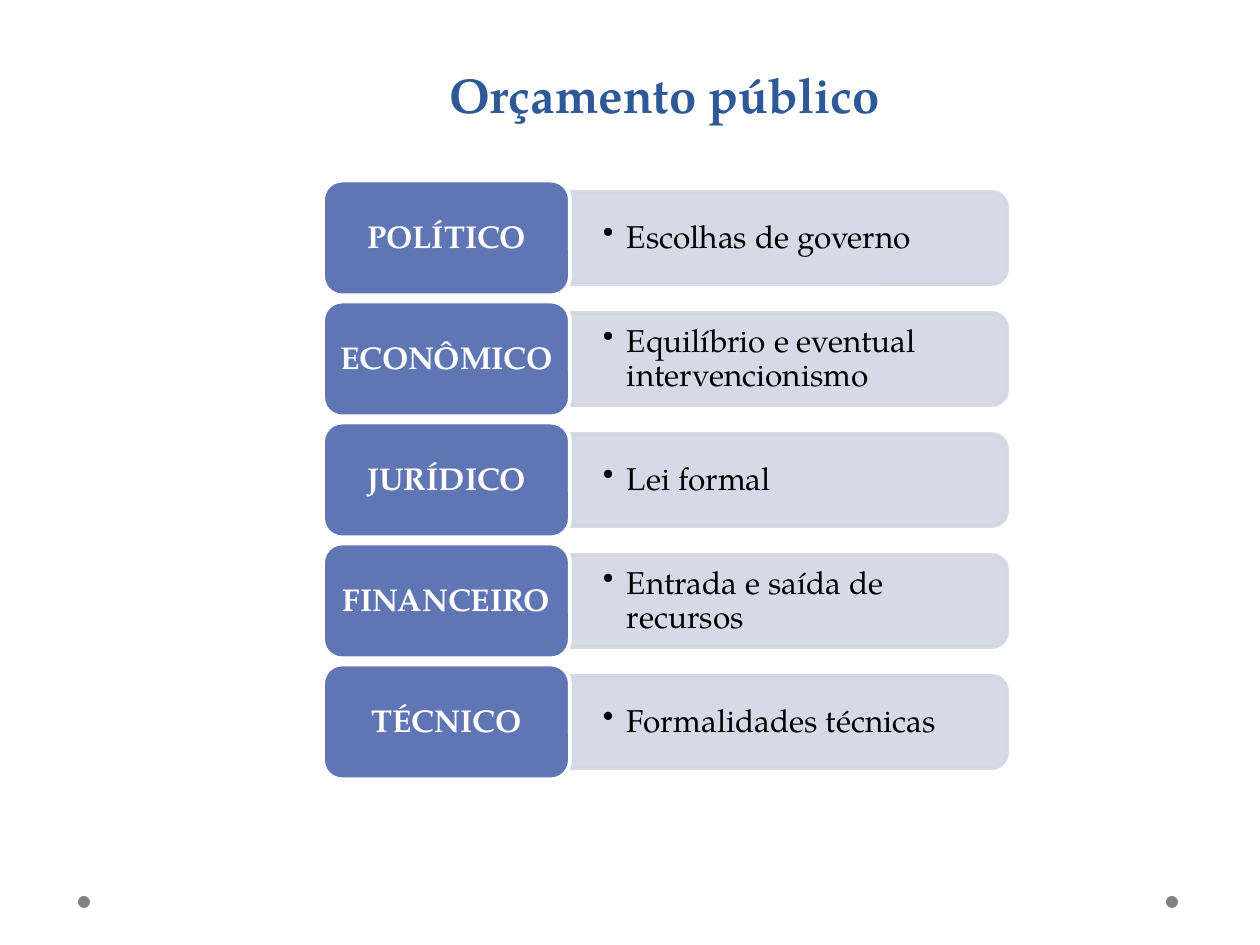
from lxml.etree import SubElement
from pptx import Presentation
from pptx.dml.color import RGBColor
from pptx.enum.shapes import MSO_SHAPE as Shape
from pptx.enum.text import MSO_ANCHOR as Anchor, PP_ALIGN as Align
from pptx.oxml.ns import qn
from pptx.util import Emu, Pt

FONT = "TeX Gyre Pagella"
COLORS = {
    "title": "2F5897",
    "label": "6076B4",
    "panel": "D2D6E5",
    "white": "FFFFFF",
    "black": "000000",
    "dot": "808080",
}
ROWS = [
    ("POLÍTICO", "Escolhas de governo"),
    ("ECONÔMICO", "Equilíbrio e eventual intervencionismo"),
    ("JURÍDICO", "Lei formal"),
    ("FINANCEIRO", "Entrada e saída de recursos"),
    ("TÉCNICO", "Formalidades técnicas"),
]
FIRST_ROW_CENTER, ROW_STEP = 238, 121
LABEL_LEFT, LABEL_WIDTH, LABEL_HEIGHT = 323, 247, 115
PANEL_LEFT, PANEL_WIDTH, PANEL_HEIGHT = 569, 438, 92
DETAIL_WIDTH, DETAIL_HEIGHT = 433, 83


def px(length):
    return Emu(round(length * 914400 / 126))


def color(name):
    return RGBColor.from_string(COLORS[name])


def add_shape(page, kind, left, top, width, height, fill, line=None):
    shape = page.shapes.add_shape(kind, px(left), px(top), px(width), px(height))
    shape.shadow.inherit = False
    shape.fill.solid()
    shape.fill.fore_color.rgb = color(fill)
    if line:
        shape.line.color.rgb = color(line)
        shape.line.width = Pt(2.25)
    else:
        shape.line.fill.background()
    return shape


def set_opacity(shape, percent):
    for fill in shape.element.spPr.iter(qn("a:srgbClr")):
        SubElement(fill, qn("a:alpha"), val=str(percent * 1000))


def add_bullet(para, indent):
    props = para._p.get_or_add_pPr()
    props.set("marL", str(px(indent)))
    props.set("indent", str(-px(indent)))
    SubElement(props, qn("a:buChar"), char="•")


def set_text(shape, text, size, ink, spacing, bold=False, align=Align.LEFT,
             anchor=Anchor.MIDDLE, margins=(13, 6), bullet_indent=None):
    frame = shape.text_frame
    frame.word_wrap = True
    frame.vertical_anchor = anchor
    frame.margin_left = frame.margin_right = px(margins[0])
    frame.margin_top = frame.margin_bottom = px(margins[1])
    para = frame.paragraphs[0]
    para.text = text
    if bullet_indent:
        para.level = 1
        add_bullet(para, bullet_indent)
    para.alignment = align
    para.line_spacing = spacing
    font = para.font
    font.name, font.size, font.bold = FONT, Pt(size), bold
    font.color.rgb = color(ink)


def add_text_box(page, left, top, width, height, text, size, ink, spacing, **style):
    box = page.shapes.add_textbox(px(left), px(top), px(width), px(height))
    set_text(box, text, size, ink, spacing, **style)


def add_row(page, center, label, detail):
    # Panel: rounded top corners turned to the right
    panel = add_shape(page, Shape.ROUND_2_SAME_RECTANGLE,
                      PANEL_LEFT + (PANEL_WIDTH - PANEL_HEIGHT) / 2,
                      center - PANEL_WIDTH / 2,
                      PANEL_HEIGHT, PANEL_WIDTH, "panel", "panel")
    panel.rotation = 90
    set_opacity(panel, 90)
    add_text_box(page, PANEL_LEFT, center - DETAIL_HEIGHT / 2, DETAIL_WIDTH,
                 DETAIL_HEIGHT, detail, 18, "black", 0.9,
                 margins=(34, 17), bullet_indent=24)

    # Label
    tile = add_shape(page, Shape.ROUNDED_RECTANGLE, LABEL_LEFT,
                     center - LABEL_HEIGHT / 2, LABEL_WIDTH, LABEL_HEIGHT,
                     "label", "white")
    set_text(tile, label, 18, "white", 0.9, bold=True, align=Align.CENTER,
             margins=(8, 5))


def main():
    deck = Presentation()
    deck.slide_width, deck.slide_height = px(1260), px(945)
    page = deck.slides.add_slide(deck.slide_layouts[6])

    # Footer dots
    for left in (1166, 78):
        add_shape(page, Shape.OVAL, left, 896, 12, 12, "dot")

    # Title
    add_text_box(page, 233, 16, 863, 117, "Orçamento público", 28, "title",
                 Pt(58), bold=True, align=Align.CENTER, anchor=Anchor.TOP)

    # Aspects of the budget
    for index, (label, detail) in enumerate(ROWS):
        add_row(page, FIRST_ROW_CENTER + index * ROW_STEP, label, detail)

    deck.save("out.pptx")


if __name__ == "__main__":
    main()
